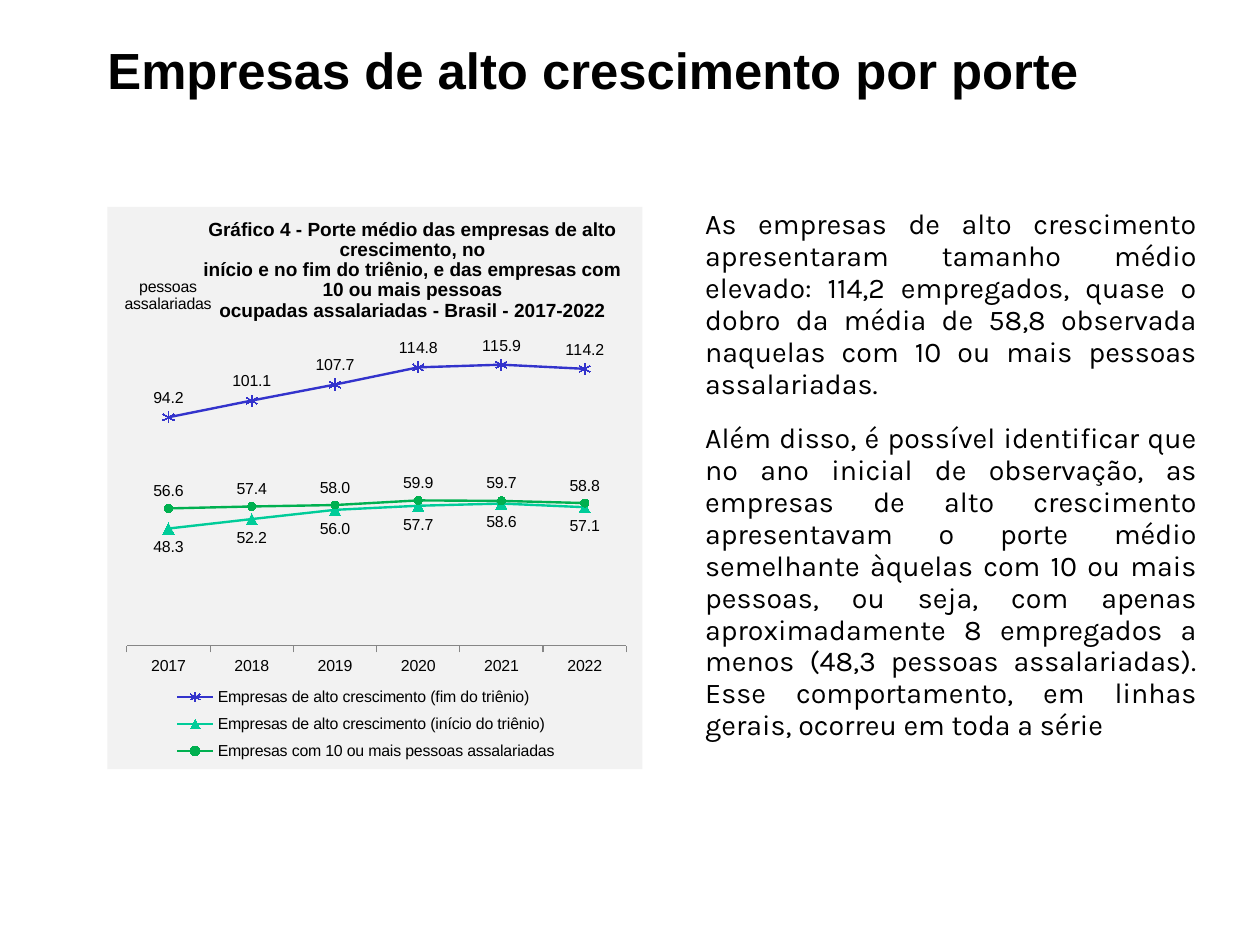
"""Build a slide on the size of high-growth companies with a line chart."""
from lxml import etree
from pptx import Presentation
from pptx.chart.data import CategoryChartData
from pptx.dml.color import RGBColor
from pptx.enum.chart import (XL_CHART_TYPE, XL_LABEL_POSITION, XL_LEGEND_POSITION,
                             XL_MARKER_STYLE, XL_TICK_MARK)
from pptx.enum.text import MSO_ANCHOR, PP_ALIGN
from pptx.oxml import parse_xml
from pptx.oxml.ns import nsdecls, qn
from pptx.util import Inches, Pt

ABOVE, BELOW = XL_LABEL_POSITION.ABOVE, XL_LABEL_POSITION.BELOW
STAR, TRIANGLE, CIRCLE = XL_MARKER_STYLE.STAR, XL_MARKER_STYLE.TRIANGLE, XL_MARKER_STYLE.CIRCLE
LEFT, CENTER, JUSTIFY = PP_ALIGN.LEFT, PP_ALIGN.CENTER, PP_ALIGN.JUSTIFY
TOP = MSO_ANCHOR.TOP

BLACK = RGBColor(0x00, 0x00, 0x00)
GRAY = RGBColor(0x86, 0x86, 0x86)
PANEL = RGBColor(0xF2, 0xF2, 0xF2)
BLUE = RGBColor(0x33, 0x33, 0xCC)
TEAL = RGBColor(0x00, 0xCC, 0x99)
GREEN = RGBColor(0x00, 0xB0, 0x50)

TITLE = "Empresas de alto crescimento por porte"
BODY = [
    "As empresas de alto crescimento apresentaram tamanho médio elevado: 114,2 empregados, "
    "quase o dobro da média de 58,8 observada naquelas com 10 ou mais pessoas assalariadas.",
    "Além disso, é possível identificar que no ano inicial de observação, as empresas de alto "
    "crescimento apresentavam o porte médio semelhante àquelas com 10 ou mais pessoas, ou seja, "
    "com apenas aproximadamente 8 empregados a menos (48,3 pessoas assalariadas). Esse "
    "comportamento, em linhas gerais, ocorreu em toda a série",
]
CHART_TITLE = [
    "Gráfico 4 - Porte médio das empresas de alto crescimento, no",
    "início e no fim do triênio, e das empresas com 10 ou mais pessoas",
    "ocupadas assalariadas - Brasil - 2017-2022",
]
UNIT = ["pessoas", "assalariadas"]
YEARS = ["2017", "2018", "2019", "2020", "2021", "2022"]
SERIES = [
    ("Empresas de alto crescimento (fim do triênio)",
     (94.2, 101.1, 107.7, 114.8, 115.9, 114.2), BLUE, STAR, 7, ABOVE, "0.0"),
    ("Empresas de alto crescimento (início do triênio)",
     (48.3, 52.2, 56, 57.7, 58.6, 57.1), TEAL, TRIANGLE, 7, BELOW, "0.0"),
    ("Empresas com 10 ou mais pessoas assalariadas",
     (56.6, 57.4, 58, 59.9, 59.7, 58.8), GREEN, CIRCLE, 5, ABOVE, "#,##0.0"),
]

CM_PER_INCH = 2.54
SLIDE_W, SLIDE_H = 28 / CM_PER_INCH, 21 / CM_PER_INCH
MARGIN, CONTENT_TOP = 0.94, 1.81
COL_W, COL_H, GAP = 4.68, 4.92, 0.17
INDENT = 0.38


def set_font(font, name, size, bold=False):
    """Format a font in black."""
    font.name, font.size, font.bold = name, Pt(size), bold
    font.color.rgb = BLACK


def fill_text(tf, lines, align, name, size, bold=False, spacing=None, after=0):
    """Write one paragraph per line and format it."""
    for i, line in enumerate(lines):
        p = tf.paragraphs[0] if i == 0 else tf.add_paragraph()
        p.text = line
        p.alignment = align
        if spacing:
            p.line_spacing = spacing
        p.space_after = Pt(after)
        set_font(p.runs[0].font, name, size, bold)


def set_layout(el, index, left, top, width=None, height=None, target=None):
    """Place a chart part, given in inches, by a manual layout."""
    for old in el.findall(qn("c:layout")):
        el.remove(old)
    layout = etree.Element(qn("c:layout"))
    manual = etree.SubElement(layout, qn("c:manualLayout"))
    values = {"layoutTarget": target} if target else {}
    values.update(xMode="edge", yMode="edge", x=left / COL_W, y=top / COL_H)
    if width:
        values.update(w=width / COL_W, h=height / COL_H)
    for tag, value in values.items():
        etree.SubElement(manual, qn("c:" + tag)).set("val", str(value))
    el.insert(index, layout)


def add_size_chart(slide):
    """Add the line chart of average company size."""
    data = CategoryChartData()
    data.categories = YEARS
    for name, values, *_ in SERIES:
        data.add_series(name, values)
    box = map(Inches, (MARGIN, CONTENT_TOP, COL_W, COL_H))
    chart = slide.shapes.add_chart(XL_CHART_TYPE.LINE_MARKERS, *box, data).chart
    set_font(chart.font, "Arial", 10)

    fill_text(chart.chart_title.text_frame, CHART_TITLE, CENTER, "Arial", 12, bold=True)
    chart.has_legend = True
    chart.legend.position = XL_LEGEND_POSITION.BOTTOM
    chart.legend.include_in_layout = False

    years, sizes = chart.category_axis, chart.value_axis
    years.major_tick_mark = XL_TICK_MARK.OUTSIDE
    years.format.line.color.rgb = GRAY
    years.format.line.width = Pt(0.75)
    sizes.minimum_scale, sizes.maximum_scale = 0, 140
    sizes.has_major_gridlines = False
    sizes.tick_labels.number_format = "0.0"
    sizes.tick_labels.number_format_is_linked = False
    sizes.visible = False
    unit = sizes.axis_title.text_frame
    fill_text(unit, UNIT, CENTER, "Arial", 10)
    unit._txBody.find(qn("a:bodyPr")).set("rot", "0")

    plot = chart.plots[0]
    plot.vary_by_categories = False
    for ser, (_, _, color, style, size, position, fmt) in zip(plot.series, SERIES):
        ser.smooth = False
        ser.format.line.color.rgb = color
        ser.format.line.width = Pt(1.5)
        ser.marker.style, ser.marker.size = style, size
        ser.marker.format.fill.solid()
        ser.marker.format.fill.fore_color.rgb = color
        ser.marker.format.line.color.rgb = color
        labels = ser.data_labels
        labels.show_value = True
        labels.position = position
        labels.number_format, labels.number_format_is_linked = fmt, False
        set_font(labels.font, "Arial", 10)

    space = chart._chartSpace
    body = space.find(qn("c:chart"))
    title, area = body.find(qn("c:title")), body.find(qn("c:plotArea"))
    title.find(qn("c:overlay")).set("val", "1")
    set_layout(title, 1, 0.81, 0.06)
    set_layout(area.find(qn("c:valAx")).find(qn("c:title")), 1, 0.12, 0.57)
    set_layout(body.find(qn("c:legend")), 1, 0.53, 4.13, 3.46, 0.79)
    set_layout(area, 0, 0.17, 0.87, 4.37, 2.97, target="inner")
    body.addnext(parse_xml(
        f'<c:spPr {nsdecls("c", "a")}><a:solidFill><a:srgbClr val="{PANEL}"/></a:solidFill>'
        '<a:ln><a:noFill/></a:ln></c:spPr>'))


def add_body(slide):
    """Add the justified commentary beside the chart."""
    box = map(Inches, (MARGIN + COL_W + GAP, CONTENT_TOP, COL_W, COL_H))
    tf = slide.shapes.add_textbox(*box).text_frame
    tf.word_wrap = True
    tf.margin_left = tf.margin_right = tf.margin_bottom = 0
    tf.margin_top = Inches(0.02)
    fill_text(tf, BODY, JUSTIFY, "Karla", 18, spacing=0.93, after=14.2)
    for p in tf.paragraphs:
        p._p.get_or_add_pPr().set("marL", str(Inches(INDENT)))


def main():
    """Build and save the slide."""
    prs = Presentation()
    prs.slide_width, prs.slide_height = Inches(SLIDE_W), Inches(SLIDE_H)
    slide = prs.slides.add_slide(prs.slide_layouts[5])

    title = slide.shapes.title
    title.left, title.top, title.width, title.height = map(Inches, (MARGIN, 0.39, 9.53, 1.31))
    tf = title.text_frame
    tf.margin_left = tf.margin_top = tf.margin_right = tf.margin_bottom = 0
    tf.vertical_anchor = TOP
    fill_text(tf, [TITLE], LEFT, "Arial", 32, bold=True, spacing=0.93)

    add_size_chart(slide)
    add_body(slide)
    prs.save("out.pptx")


if __name__ == "__main__":
    main()
